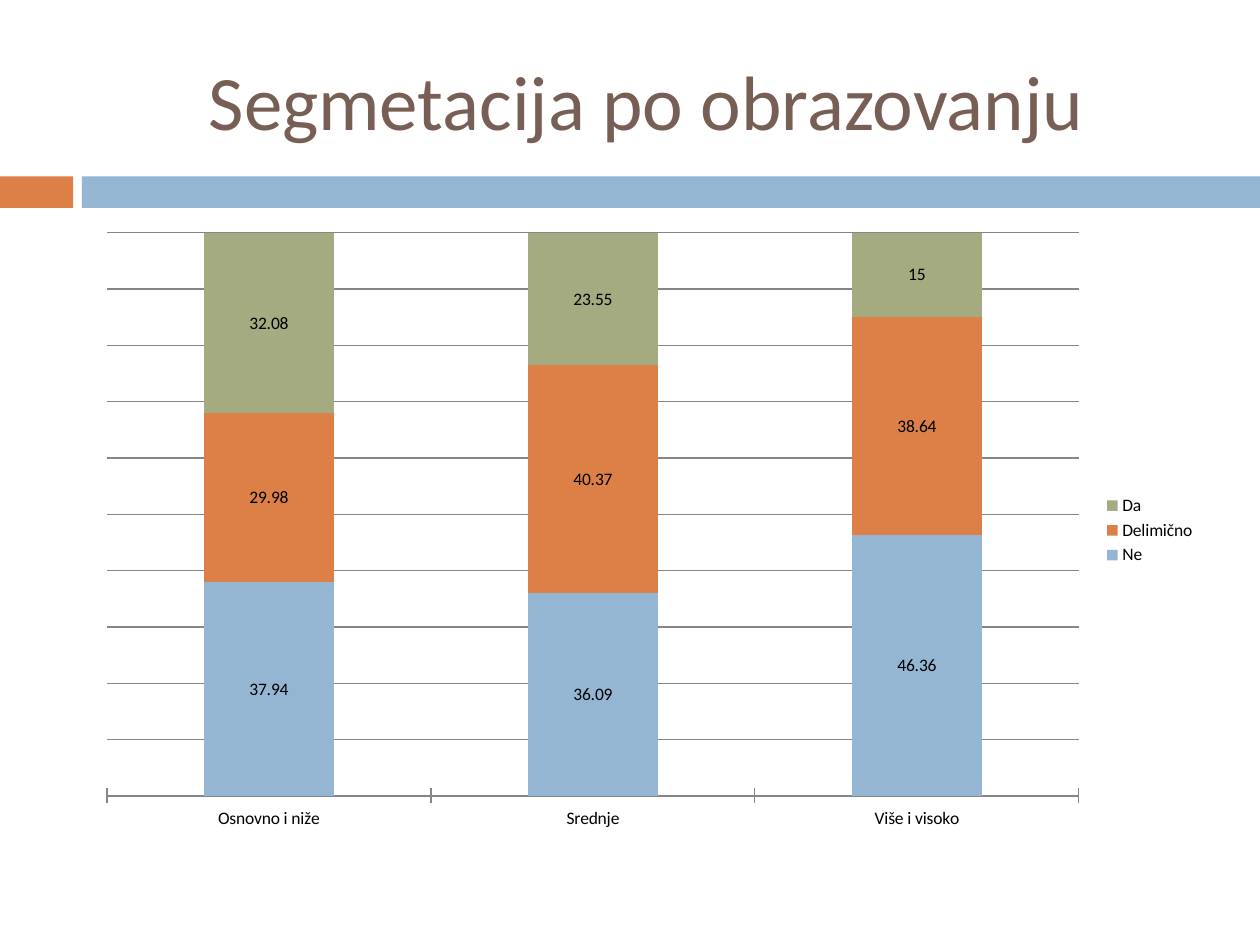
from pptx import Presentation
from pptx.chart.data import CategoryChartData
from pptx.dml.color import RGBColor
from pptx.enum.chart import XL_CHART_TYPE, XL_LABEL_POSITION, XL_LEGEND_POSITION, XL_TICK_MARK
from pptx.enum.shapes import MSO_SHAPE
from pptx.enum.text import MSO_ANCHOR, PP_ALIGN
from pptx.util import Inches, Pt

COLORS = {
    "title": "775F55",
    "blue": "94B6D2",
    "orange": "DD8047",
    "green": "A5AB81",
    "grid": "868686",
    "text": "000000",
}
FONT = "Calibri"
CATEGORIES = ["Osnovno i niže", "Srednje", "Više i visoko"]
SERIES = [
    ("Ne", "blue", [37.94, 36.09, 46.36]),
    ("Delimično", "orange", [29.98, 40.37, 38.64]),
    ("Da", "green", [32.08, 23.55, 15]),
]


def rgb(name):
    """Return the named palette colour."""
    return RGBColor.from_string(COLORS[name])


def set_values(target, values):
    """Set each attribute in values on target."""
    for name, value in values.items():
        setattr(target, name, value)


def set_font(font, size, color):
    """Give a font the deck typeface, a size and a colour."""
    set_values(font, {"name": FONT, "size": Pt(size)})
    font.color.rgb = rgb(color)


def add_band(page, box, split, gap):
    """Draw a two-part band, split by a gap, inside the box."""
    left, top, width, height = box
    parts = [("orange", left, split), ("blue", left + split + gap, width - split - gap)]
    for color, start, length in parts:
        bar = page.shapes.add_shape(MSO_SHAPE.RECTANGLE, start, top, length, height)
        bar.shadow.inherit = False
        bar.fill.solid()
        bar.fill.fore_color.rgb = rgb(color)
        bar.line.fill.background()


def place_title(page, box, text):
    """Move the title placeholder to the box and format its text."""
    title = page.shapes.title
    set_values(title, dict(zip(("left", "top", "width", "height"), box)))
    frame = title.text_frame
    set_values(frame, {"text": text, "word_wrap": True, "vertical_anchor": MSO_ANCHOR.MIDDLE})
    para = frame.paragraphs[0]
    para.alignment = PP_ALIGN.CENTER
    set_font(para.runs[0].font, 44, "title")


def add_education_chart(page, box):
    """Add the stacked percentage chart by education inside the box."""
    data = CategoryChartData()
    data.categories = CATEGORIES
    for name, _, values in SERIES:
        data.add_series(name, values)
    chart = page.shapes.add_chart(XL_CHART_TYPE.COLUMN_STACKED_100, *box, data).chart
    set_values(chart, {"has_title": False, "has_legend": True})
    set_font(chart.font, 10, "text")
    set_values(chart.legend, {"position": XL_LEGEND_POSITION.RIGHT, "include_in_layout": False})

    set_values(chart.value_axis, {"visible": False, "has_major_gridlines": True})
    chart.category_axis.major_tick_mark = XL_TICK_MARK.CROSS
    for line in (chart.value_axis.major_gridlines.format.line, chart.category_axis.format.line):
        line.width = Pt(0.75)
        line.color.rgb = rgb("grid")

    plot = chart.plots[0]
    set_values(plot, {"gap_width": 150, "overlap": 100, "vary_by_categories": False})
    for series, (_, color, _) in zip(plot.series, SERIES):
        series.format.fill.solid()
        series.format.fill.fore_color.rgb = rgb(color)
        labels = series.data_labels
        set_values(labels, {"show_value": True, "position": XL_LABEL_POSITION.CENTER})
        set_font(labels.font, 10, "text")


def main():
    """Build and save the deck."""
    deck = Presentation()
    set_values(deck, {"slide_width": Inches(10), "slide_height": Inches(7.5)})
    page = deck.slides.add_slide(deck.slide_layouts[5])
    left, width = Inches(0.67), Inches(8.92)
    band = (0, Inches(1.4), deck.slide_width, Inches(0.25))
    add_band(page, band, Inches(0.58), Inches(0.07))
    place_title(page, (left, Inches(0.25), width, Inches(1.08)), "Segmetacija po obrazovanju")
    add_education_chart(page, (left, Inches(1.75), width, Inches(4.92)))
    deck.save("out.pptx")


if __name__ == "__main__":
    main()
